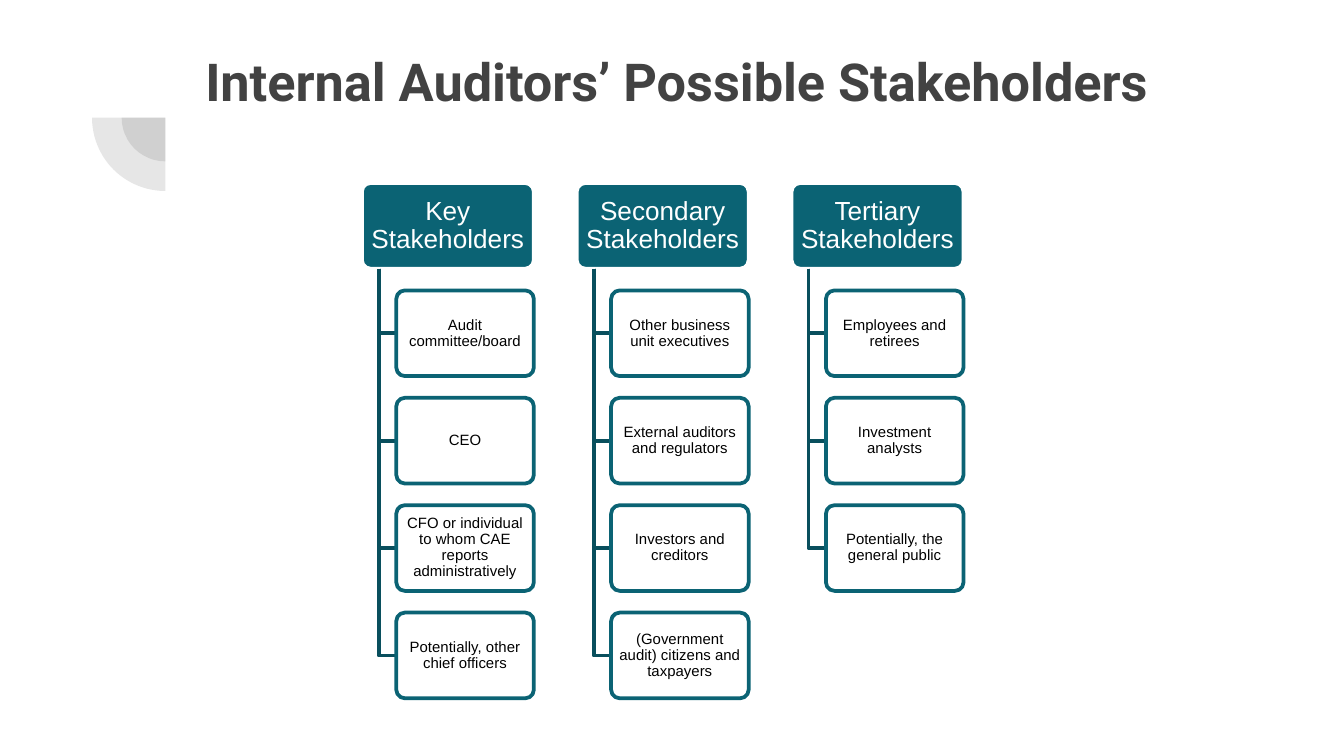
from lxml import etree
from pptx import Presentation
from pptx.dml.color import RGBColor
from pptx.enum.shapes import MSO_SHAPE
from pptx.enum.text import MSO_ANCHOR, PP_ALIGN
from pptx.oxml.ns import qn
from pptx.util import Cm, Pt

ROUNDED, PIE = MSO_SHAPE.ROUNDED_RECTANGLE, MSO_SHAPE.PIE
CENTER, LEFT = PP_ALIGN.CENTER, PP_ALIGN.LEFT
MIDDLE, TOP = MSO_ANCHOR.MIDDLE, MSO_ANCHOR.TOP

COLORS = {
    "ink": "424242",
    "teal": "0B6374",
    "branch": "094F5D",
    "white": "FFFFFF",
    "black": "000000",
}
TITLE = {"name": "Roboto", "size": Pt(28), "bold": True}
HEADING = {"name": "Arial", "size": Pt(14), "bold": False}
ITEM = {"name": "Arial", "size": Pt(8), "bold": False}

STAKEHOLDERS = {
    "Key Stakeholders": [
        "Audit committee/board",
        "CEO",
        "CFO or individual to whom CAE reports administratively",
        "Potentially, other chief officers",
    ],
    "Secondary Stakeholders": [
        "Other business unit executives",
        "External auditors and regulators",
        "Investors and creditors",
        "(Government audit) citizens and taxpayers",
    ],
    "Tertiary Stakeholders": [
        "Employees and retirees",
        "Investment analysts",
        "Potentially, the general public",
    ],
}
COLUMN_PITCH, ROW_PITCH = Cm(4.06), Cm(2.03)
CARD_HEIGHT = Cm(1.62)
TRUNK_INDENT, ITEM_INDENT = Cm(0.32), Cm(0.65)


def color(key):
    """Return the named palette colour."""
    return RGBColor.from_string(COLORS[key])


def paint(shape, fill, alpha=100):
    """Fill a shape with a palette colour at the given opacity percent."""
    shape.shadow.inherit = False
    shape.fill.solid()
    shape.fill.fore_color.rgb = color(fill)
    if alpha < 100:
        tint = shape.fill._xPr.find(qn("a:solidFill"))[0]
        etree.SubElement(tint, qn("a:alpha"), val=str(alpha * 1000))


def outline(shape, key):
    """Give a shape a two-point outline."""
    shape.line.color.rgb = color(key)
    shape.line.width = Pt(2)


def write(shape, text, style, ink, align, anchor, inset, spacing=1.0):
    """Write one formatted paragraph; inset is (horizontal, vertical)."""
    frame = shape.text_frame
    across, down = inset
    settings = {
        "word_wrap": True,
        "vertical_anchor": anchor,
        "margin_left": across,
        "margin_right": across,
        "margin_top": down,
        "margin_bottom": down,
    }
    for name, value in settings.items():
        setattr(frame, name, value)
    paragraph = frame.paragraphs[0]
    paragraph.alignment = align
    paragraph.line_spacing = spacing
    run = paragraph.add_run()
    run.text = text
    for name, value in style.items():
        setattr(run.font, name, value)
    run.font.color.rgb = color(ink)


def add_card(shapes, box, text, style, ink, fill, edge, alpha, inset):
    """Add a rounded card with centred text."""
    card = shapes.add_shape(ROUNDED, *box)
    card.adjustments[0] = 0.1
    paint(card, fill, alpha)
    outline(card, edge)
    write(card, text, style, ink, CENTER, MIDDLE, inset, 0.9)


def add_branch(shapes, left, top, right, bottom):
    """Add an elbow from a heading down to an item."""
    builder = shapes.build_freeform(left, top)
    builder.add_line_segments([(left, bottom), (right, bottom)], close=False)
    elbow = builder.convert_to_shape()
    elbow.shadow.inherit = False
    elbow.fill.background()
    outline(elbow, "branch")


def add_column(shapes, left, top, width, heading, items):
    """Add one stakeholder class with its items hanging below."""
    add_card(shapes, (left, top, width, CARD_HEIGHT), heading, HEADING,
             "white", "teal", "white", 100, (Cm(0.07), Cm(0.04)))
    item_left = left + ITEM_INDENT
    for row, item in enumerate(items, 1):
        item_top = top + row * ROW_PITCH
        add_branch(shapes, left + TRUNK_INDENT, top + CARD_HEIGHT,
                   item_left, item_top + CARD_HEIGHT // 2)
        add_card(shapes, (item_left, item_top, width - ITEM_INDENT, CARD_HEIGHT),
                 item, ITEM, "black", "white", "teal", 90, (Cm(0.05), Cm(0.03)))


def add_hierarchy(slide, left, top, column_width):
    """Add the grouped stakeholder columns."""
    shapes = slide.shapes.add_group_shape().shapes
    for column, (heading, items) in enumerate(STAKEHOLDERS.items()):
        add_column(shapes, left + column * COLUMN_PITCH, top, column_width,
                   heading, items)


def add_corner_ornament(slide, left, top, size):
    """Add two concentric translucent quarter discs."""
    shapes = slide.shapes.add_group_shape().shapes
    for diameter in (Cm(1.65), size):
        margin = (size - diameter) // 2
        quarter = shapes.add_shape(PIE, left + margin, top + margin,
                                   diameter, diameter)
        quarter.adjustments[0] = 108
        quarter.adjustments[1] = 162
        quarter.rotation = 270
        paint(quarter, "ink", 13)
        quarter.line.fill.background()


def add_title(slide, left, top, width, height):
    """Add the slide title."""
    title = slide.shapes.add_textbox(left, top, width, height)
    write(title, "Internal Auditors’ Possible Stakeholders", TITLE, "ink",
          LEFT, TOP, (Cm(0.25), Cm(0.25)))


def main():
    """Build and save the stakeholder slide."""
    deck = Presentation()
    deck.slide_width, deck.slide_height = Cm(25.4), Cm(14.29)
    slide = deck.slides.add_slide(deck.slide_layouts[6])
    add_corner_ornament(slide, Cm(1.74), Cm(0.84), Cm(2.77))
    add_hierarchy(slide, Cm(6.84), Cm(3.46), Cm(3.25))
    add_title(slide, Cm(3.63), Cm(0.69), Cm(19.53), Cm(2.06))
    deck.save("out.pptx")


if __name__ == "__main__":
    main()
